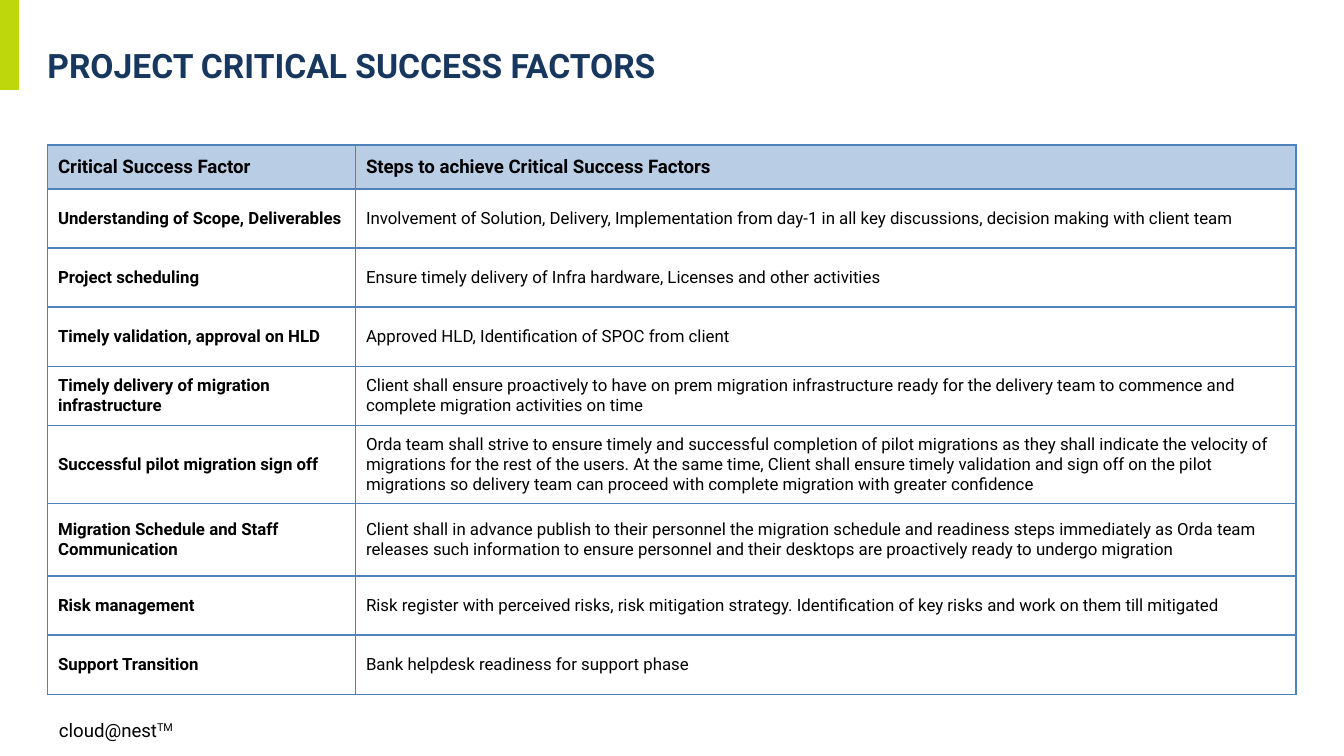
from lxml import etree
from pptx import Presentation
from pptx.dml.color import RGBColor
from pptx.enum import shapes, text
from pptx.oxml.ns import qn
from pptx.util import Pt

COLORS = {
    "accent": "BDD70C",
    "title": "17375E",
    "body": "000000",
    "header": "B9CDE5",
    "border": "4F81BD",
}
FONT = "Roboto"

HEADINGS = ("Critical Success Factor", "Steps to achieve Critical Success Factors")
ROW = 31.7
# factor, steps, row height
FACTORS = [
    ("Understanding of Scope, Deliverables",
     "Involvement of Solution, Delivery, Implementation from day-1 in all key "
     "discussions, decision making with client team", ROW),
    ("Project scheduling",
     "Ensure timely delivery of Infra hardware, Licenses and other activities", ROW),
    ("Timely validation, approval on HLD",
     "Approved HLD, Identification of SPOC from client", ROW),
    ("Timely delivery of migration infrastructure",
     "Client shall ensure proactively to have on prem migration infrastructure ready "
     "for the delivery team to commence and complete migration activities on time", ROW),
    ("Successful pilot migration sign off",
     "Orda team shall strive to ensure timely and successful completion of pilot "
     "migrations as they shall indicate the velocity of migrations for the rest of the "
     "users. At the same time, Client shall ensure timely validation and sign off on the "
     "pilot migrations so delivery team can proceed with complete migration with greater "
     "confidence", 41.8),
    ("Migration Schedule and Staff Communication",
     "Client shall in advance publish to their personnel the migration schedule and "
     "readiness steps immediately as Orda team releases such information to ensure "
     "personnel and their desktops are proactively ready to undergo migration", 38.9),
    ("Risk management",
     "Risk register with perceived risks, risk mitigation strategy. Identification of key "
     "risks and work on them till mitigated", ROW),
    ("Support Transition", "Bank helpdesk readiness for support phase", ROW),
]


class SlideBuilder:
    def __init__(self, slide):
        self.slide = slide

    def color(self, name):
        return RGBColor.from_string(COLORS[name])

    def add_run(self, paragraph, wording, size, color="body", bold=False, baseline=0):
        """Append a styled run; baseline is a percentage, positive for superscript."""
        run = paragraph.add_run()
        run.text = wording
        run.font.name = FONT
        run.font.size = Pt(size)
        run.font.bold = bold
        run.font.color.rgb = self.color(color)
        if baseline:
            run.font._element.set("baseline", str(baseline * 1000))

    def add_bar(self, left, top, width, height):
        bar = self.slide.shapes.add_shape(
            shapes.MSO_SHAPE.RECTANGLE, Pt(left), Pt(top), Pt(width), Pt(height))
        bar.shadow.inherit = False
        bar.fill.solid()
        bar.fill.fore_color.rgb = self.color("accent")
        bar.line.fill.background()

    def add_text(self, left, top, width, height):
        """Add an empty text box and return its text frame."""
        box = self.slide.shapes.add_textbox(Pt(left), Pt(top), Pt(width), Pt(height))
        return box.text_frame

    def add_borders(self, cell):
        properties = cell._tc.get_or_add_tcPr()
        for side in ("a:lnL", "a:lnR", "a:lnT", "a:lnB"):
            line = etree.SubElement(properties, qn(side), w=str(Pt(1)))
            fill = etree.SubElement(line, qn("a:solidFill"))
            etree.SubElement(fill, qn("a:srgbClr"), val=COLORS["border"])

    def fill_cell(self, cell, wording, size, bold, fill=None):
        cell.margin_left = cell.margin_right = Pt(5.7)
        cell.margin_top = cell.margin_bottom = 0
        cell.vertical_anchor = text.MSO_ANCHOR.MIDDLE
        self.add_borders(cell)
        if fill:
            cell.fill.solid()
            cell.fill.fore_color.rgb = self.color(fill)
        else:
            cell.fill.background()
        self.add_run(cell.text_frame.paragraphs[0], wording, size, bold=bold)

    def add_factor_table(self, left, top, widths, header_height):
        heights = [header_height] + [height for *_, height in FACTORS]
        table = self.slide.shapes.add_table(
            len(heights), len(widths), Pt(left), Pt(top),
            Pt(sum(widths)), Pt(sum(heights))).table
        table.first_row = table.horz_banding = False
        for column, width in zip(table.columns, widths):
            column.width = Pt(width)
        for row, height in zip(table.rows, heights):
            row.height = Pt(height)
        for col, heading in enumerate(HEADINGS):
            self.fill_cell(table.cell(0, col), heading, 10, True, "header")
        for row, (factor, steps, _) in enumerate(FACTORS, start=1):
            self.fill_cell(table.cell(row, 0), factor, 9, True)
            self.fill_cell(table.cell(row, 1), steps, 9, False)


def main():
    deck = Presentation()
    deck.slide_width, deck.slide_height = Pt(720), Pt(405)
    builder = SlideBuilder(deck.slides.add_slide(deck.slide_layouts[6]))

    builder.add_bar(-0.5, 0, 10.7, 48.2)

    footer = builder.add_text(24.5, 381.6, 75.6, 19.4)
    footer.word_wrap = False
    footer.auto_size = text.MSO_AUTO_SIZE.SHAPE_TO_FIT_TEXT
    builder.add_run(footer.paragraphs[0], "cloud@nest", 10)
    builder.add_run(footer.paragraphs[0], "TM", 10, baseline=30)

    title = builder.add_text(25.4, 20.5, 603.4, 28.8)
    title.word_wrap = True
    title.margin_left = 0
    title.vertical_anchor = text.MSO_ANCHOR.MIDDLE
    builder.add_run(title.paragraphs[0], "PROJECT CRITICAL SUCCESS FACTORS", 18,
                    "title", bold=True)

    builder.add_factor_table(25.4, 77.6, (165, 504), 23.6)
    deck.save("out.pptx")


if __name__ == "__main__":
    main()
